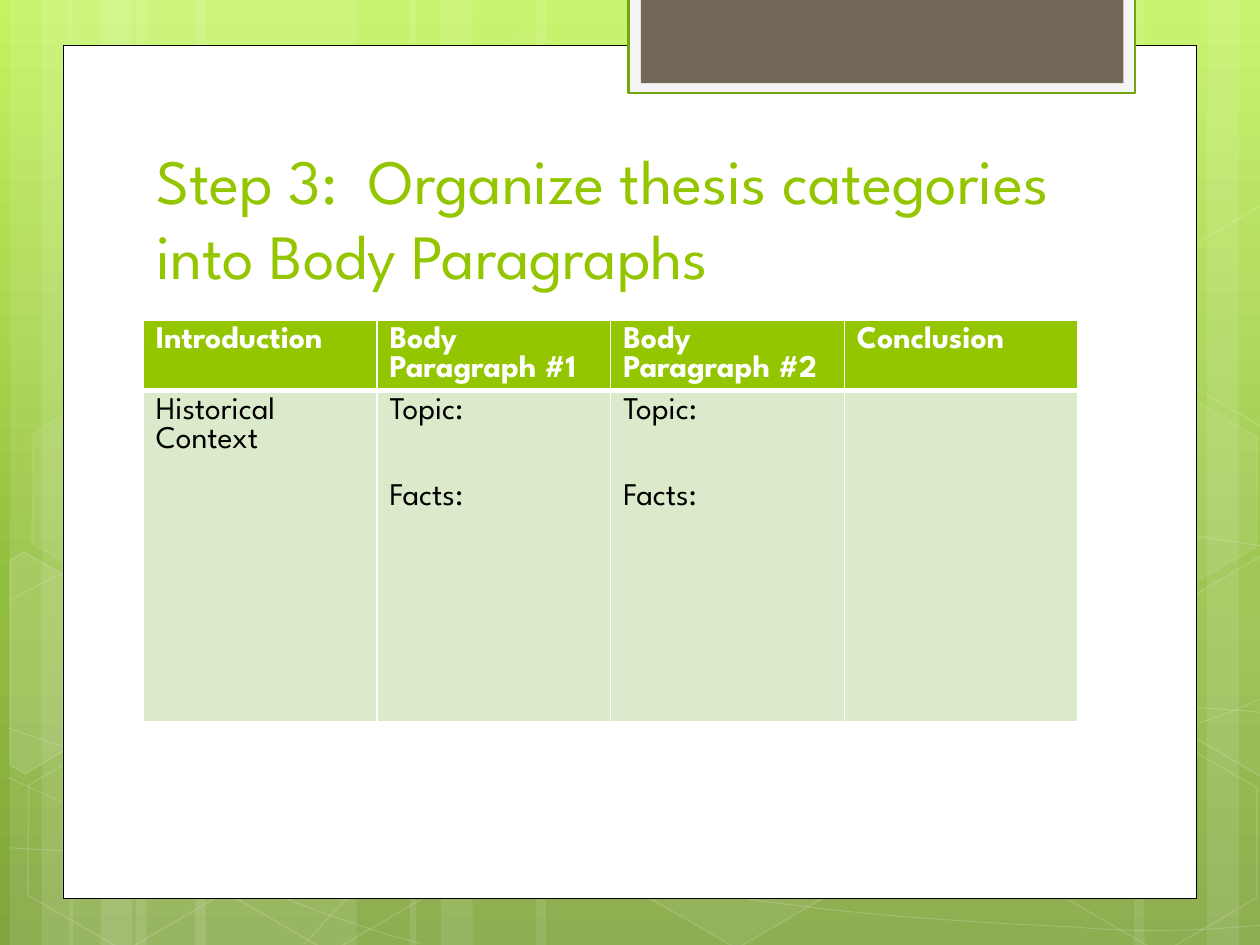
import copy

import pptx
import pptx.dml.color
import pptx.enum.shapes
import pptx.enum.text
import pptx.oxml
import pptx.oxml.ns
import pptx.util

Cm, Pt = pptx.util.Cm, pptx.util.Pt
RGB = pptx.dml.color.RGBColor.from_string
SHAPE = pptx.enum.shapes.MSO_SHAPE
ANCHOR = pptx.enum.text.MSO_ANCHOR
NS = pptx.oxml.ns.nsdecls("a")

FONT = "League Spartan"
COLORS = {
    "white": "FFFFFF", "black": "000000", "lime": "94C600", "pale": "DCEACC",
    "frame": "F5F5F5", "frame line": "74A510", "brown": "71685A",
    "bg top": "C3F35F", "bg middle": "93BF3F", "bg bottom": "81A53E",
}


def write(tf, text, size=18, color="black", bold=False, gap=0, spacing=None):
    """Fill a text frame, one paragraph per line, with a gap between them."""
    tf.word_wrap = True
    for i, line in enumerate(text.split("\n")):
        p = tf.add_paragraph() if i else tf.paragraphs[0]
        if i:
            p.space_before = Pt(gap)
        if spacing:
            p.line_spacing = Pt(spacing)
        if line:
            r = p.add_run()
            r.text = line
            r.font.name, r.font.size, r.font.bold = FONT, Pt(size), bold
            r.font.color.rgb = RGB(COLORS[color])


def paint(sp, fill=None, line=None, width=1, fill_alpha=100, line_alpha=100):
    """Set fill and line, with opacity in percent."""
    sp.shadow.inherit = False
    for part, color, alpha, parent in (
            (sp.fill, fill, fill_alpha, "p:spPr"),
            (sp.line.fill, line, line_alpha, "p:spPr/a:ln")):
        if color is None:
            part.background()
            continue
        part.solid()
        part.fore_color.rgb = RGB(COLORS[color])
        if alpha < 100:
            clr = sp.element.xpath(f"./{parent}/a:solidFill/a:srgbClr")[0]
            clr.append(pptx.oxml.parse_xml(f'<a:alpha {NS} val="{alpha * 1000}"/>'))
    if line:
        sp.line.width = Pt(width)


prs = pptx.Presentation()
prs.slide_width, prs.slide_height = Cm(25.4), Cm(19.05)
s = prs.slides.add_slide(prs.slide_layouts[6])

# Background gradient, top to bottom
bg = s.background.fill
bg.gradient()
bg.gradient_angle = 270
stops = s.element.xpath(".//a:gsLst")[0]
stops.insert(1, copy.deepcopy(stops[0]))
for stop, position, name in zip(bg.gradient_stops, (0, 0.62, 1),
                                ("bg top", "bg middle", "bg bottom")):
    stop.position = position
    stop.color.rgb = RGB(COLORS[name])

# Translucent vertical stripes: left, width
for x, w in ((2.74, 4.45), (0.2, 1.27), (0.84, 2.12), (3.94, 4.45),
             (1.4, 1.27), (2.03, 2.12), (18.62, 4.45), (24.33, 1.27),
             (22.86, 2.12), (10.8, 7.83), (8.26, 1.27), (8.89, 2.12)):
    sp = s.shapes.add_shape(SHAPE.RECTANGLE, Cm(x), 0, Cm(w), prs.slide_height)
    paint(sp, "white", fill_alpha=10)

# Thin curves: a start point, then cubic segments of three points
curves = (
    ((0.18, 17.09), (1.55, 17.17), (2.92, 17.25), (4.83, 17.22),
     (6.73, 17.2), (9.09, 17.15), (11.63, 16.89),
     (14.17, 16.64), (17.78, 16.15), (20.12, 15.67),
     (22.43, 15.19), (24.82, 14.43), (25.58, 14)),
    ((0.18, 12.12), (0.91, 11.71), (1.65, 11.33), (3.07, 10.95),
     (4.52, 10.57), (6.58, 10.01), (8.81, 9.83),
     (11.07, 9.65), (13.82, 9.63), (16.61, 9.83),
     (19.41, 10.03), (24.05, 10.82), (25.58, 11.02)),
    ((0.15, 15.67), (3.23, 17.07), (6.27, 18.47), (8.48, 19.02)),
    ((0.18, 14.68), (0.97, 14.96), (1.78, 15.24), (3.25, 15.65),
     (4.72, 16.03), (6.93, 16.66), (9.07, 17.09),
     (11.18, 17.53), (13.84, 17.98), (15.95, 18.24),
     (18.06, 18.52), (20.32, 18.62), (21.67, 18.69),
     (22.99, 18.8), (23.34, 18.75), (24, 18.75),
     (24.66, 18.72), (25.12, 18.67), (25.58, 18.64)),
    ((6.15, 19.02), (6.6, 18.52), (7.06, 18.01), (7.67, 17.55),
     (8.28, 17.09), (9.14, 16.59), (9.86, 16.23),
     (10.57, 15.88), (11, 15.72), (11.94, 15.47),
     (12.85, 15.21), (14.55, 14.86), (15.44, 14.68),
     (16.36, 14.5), (16.48, 14.5), (17.27, 14.45),
     (18.06, 14.38), (19.3, 14.3), (20.17, 14.27),
     (21.06, 14.25), (22.5, 14.27), (22.5, 14.27),
     (23.07, 14.27), (23.64, 14.27), (24.21, 14.27),
     (24.66, 14.3), (25.1, 14.33), (25.32, 14.35),
     (25.55, 14.38), (25.48, 14.35), (25.55, 14.38)),
)
for curve in curves:
    points = [(Cm(x), Cm(y)) for x, y in curve]
    fb = s.shapes.build_freeform(*points[0])
    fb.add_line_segments(points[1:], close=False)
    sp = fb.convert_to_shape()
    # Join every three line segments into one cubic segment
    segments = sp.element.xpath(".//a:lnTo")
    for i in range(0, len(segments), 3):
        cubic = pptx.oxml.parse_xml(f"<a:cubicBezTo {NS}/>")
        segments[i].addprevious(cubic)
        for segment in segments[i:i + 3]:
            cubic.append(segment[0])
            segment.getparent().remove(segment)
    paint(sp, line="white", width=0.5, line_alpha=20)

# Hexagons: left, top, fill opacity (0 for none), line opacity
for x, y, fill_alpha, line_alpha in (
        (8.48, 0.91, 4, 8), (12.62, 14.96, 6, 12), (0.28, 15.01, 0, 12),
        (0.36, 7.92, 7, 8), (4.42, 15.04, 0, 12), (21.18, 15.06, 0, 12),
        (21.18, 7.98, 7, 8)):
    sp = s.shapes.add_shape(SHAPE.HEXAGON, Cm(x), Cm(y), Cm(4.45), Cm(3.86))
    sp.adjustments[0] = 0.285
    sp.rotation = 30
    paint(sp, "white" if fill_alpha else None, "white",
          fill_alpha=fill_alpha, line_alpha=line_alpha)

# Hexagons cut off by the slide edges: fill opacity, corners
for fill_alpha, corners in (
        (10, ((0.2, 11.3), (0.48, 11.13), (2.44, 12.24), (2.41, 14.48),
              (0.51, 15.6), (0.2, 15.42))),
        (4, ((23.52, 12.32), (25.43, 11.2), (25.63, 11.33), (25.63, 15.57),
             (25.45, 15.67), (23.52, 14.55))),
        (0, ((23.52, 5.26), (25.43, 4.14), (25.65, 4.27), (25.63, 8.51),
             (25.45, 8.61), (23.52, 7.49)))):
    points = [(Cm(x), Cm(y)) for x, y in corners]
    fb = s.shapes.build_freeform(*points[0])
    fb.add_line_segments(points[1:], close=True)
    paint(fb.convert_to_shape(), "white" if fill_alpha else None, "white",
          fill_alpha=fill_alpha, line_alpha=12)

# White panel and the tab at its top
for x, y, w, h, fill, line, width in (
        (1.27, 0.91, 22.86, 17.2, "white", "black", 0.5),
        (12.67, -0.05, 10.21, 1.93, "frame", "frame line", 1.25),
        (12.92, -0.05, 9.73, 1.73, "brown", None, 0)):
    sp = s.shapes.add_shape(SHAPE.RECTANGLE, Cm(x), Cm(y), Cm(w), Cm(h))
    paint(sp, fill, line, width)

# Title
tf = s.shapes.add_textbox(Cm(2.9), Cm(2.84), Cm(19.51), Cm(3.18)).text_frame
tf.vertical_anchor = ANCHOR.BOTTOM
write(tf, "Step 3:  Organize thesis categories into Body Paragraphs",
      size=36, color="lime")

# Essay outline table
rows = (("Introduction", "Body Paragraph #1", "Body Paragraph #2", "Conclusion"),
        ("Historical Context", "Topic:\nFacts:", "Topic:\nFacts:", ""))
table = s.shapes.add_table(2, 4, Cm(2.89), Cm(6.45), Cm(18.84), Cm(8.1)).table
table.rows[0].height, table.rows[1].height = Cm(1.42), Cm(6.68)
for i, row in enumerate(rows):
    for j, text in enumerate(row):
        cell = table.cell(i, j)
        cell.fill.solid()
        cell.fill.fore_color.rgb = RGB(COLORS["pale" if i else "lime"])
        write(cell.text_frame, text, color="black" if i else "white",
              bold=i == 0, gap=33, spacing=16.6)
        tc_pr = cell._tc.get_or_add_tcPr()
        for k, side in enumerate(("lnL", "lnR", "lnT", "lnB")):
            tc_pr.insert(k, pptx.oxml.parse_xml(
                f'<a:{side} {NS} w="{Pt(3 if (i, side) == (0, "lnB") else 1)}">'
                f'<a:solidFill><a:srgbClr val="{COLORS["white"]}"/></a:solidFill>'
                f'</a:{side}>'))

prs.save("out.pptx")
